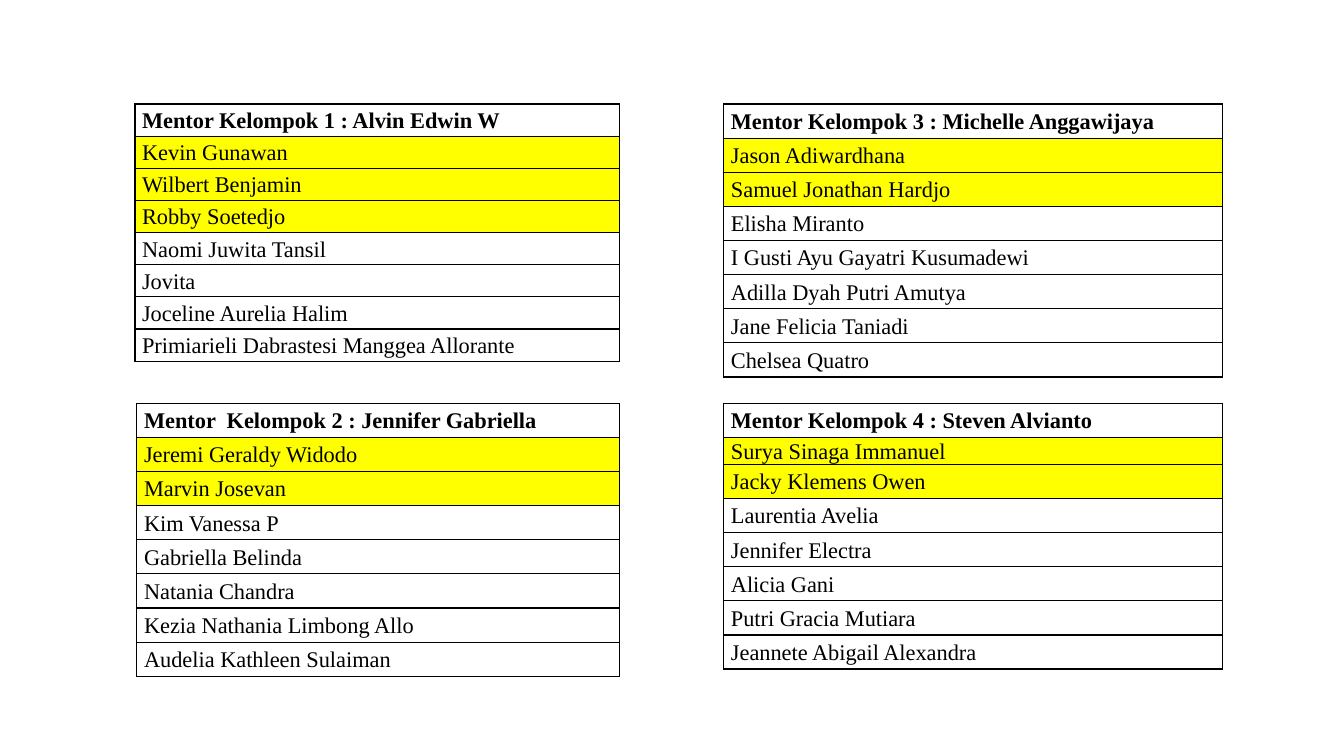
"""Build a slide with four tables of mentor groups."""
from dataclasses import dataclass

from pptx import Presentation
from pptx import util as u
from pptx.dml import color
from pptx.enum import text
from pptx.oxml import parse_xml
from pptx.oxml import ns


@dataclass(frozen=True)
class Theme:
    font: str = "Times New Roman"
    size: int = 16
    ink: str = "000000"
    mark: str = "FFFF00"
    rule: float = 1
    inset: float = 0.18
    lead: float = 1.07


@dataclass(frozen=True)
class Group:
    left: float
    top: float
    width: float
    row: float
    head: str
    marked: tuple[str, ...]
    plain: tuple[str, ...]
    tight: str = ""


THEME = Theme()
TIGHT = 0.68
GROUPS = (
    Group(3.4, 2.62, 12.22, 0.81, "Mentor Kelompok 1 : Alvin Edwin W",
          ("Kevin Gunawan", "Wilbert Benjamin", "Robby Soetedjo"),
          ("Naomi Juwita Tansil", "Jovita", "Joceline Aurelia Halim",
           "Primiarieli Dabrastesi Manggea Allorante")),
    Group(3.45, 10.16, 12.17, 0.86, "Mentor  Kelompok 2 : Jennifer Gabriella",
          ("Jeremi Geraldy Widodo", "Marvin Josevan"),
          ("Kim Vanessa P", "Gabriella Belinda", "Natania Chandra",
           "Kezia Nathania Limbong Allo", "Audelia Kathleen Sulaiman")),
    Group(18.24, 10.16, 12.57, 0.86, "Mentor Kelompok 4 : Steven Alvianto",
          ("Surya Sinaga Immanuel", "Jacky Klemens Owen"),
          ("Laurentia Avelia", "Jennifer Electra", "Alicia Gani",
           "Putri Gracia Mutiara", "Jeannete Abigail Alexandra"),
          tight="Surya Sinaga Immanuel"),
    Group(18.24, 2.62, 12.57, 0.86, "Mentor Kelompok 3 : Michelle Anggawijaya",
          ("Jason Adiwardhana", "Samuel Jonathan Hardjo"),
          ("Elisha Miranto", "I Gusti Ayu Gayatri Kusumadewi",
           "Adilla Dyah Putri Amutya", "Jane Felicia Taniadi",
           "Chelsea Quatro")),
)


def frame(cell) -> None:
    props = cell._tc.get_or_add_tcPr()
    for side in "LRTB":
        props.append(parse_xml(
            f'<a:ln{side} {ns.nsdecls("a")} w="{u.Pt(THEME.rule)}"><a:solidFill>'
            f'<a:srgbClr val="{THEME.ink}"/></a:solidFill></a:ln{side}>'))


def write(cell, words: str, bold: bool, marked: bool) -> None:
    frame(cell)
    if marked:
        cell.fill.solid()
        cell.fill.fore_color.rgb = color.RGBColor.from_string(THEME.mark)
    else:
        cell.fill.background()
    cell.margin_left = cell.margin_right = u.Cm(THEME.inset)
    cell.margin_top = cell.margin_bottom = 0
    cell.vertical_anchor = text.MSO_ANCHOR.MIDDLE
    cell.text_frame.text = words
    para = cell.text_frame.paragraphs[0]
    para.line_spacing = THEME.lead
    font = para.runs[0].font
    font.name, font.size, font.bold = THEME.font, u.Pt(THEME.size), bold
    font.color.rgb = color.RGBColor.from_string(THEME.ink)


def draw(slide, group: Group) -> None:
    lines = (group.head, *group.marked, *group.plain)
    highs = [TIGHT if line == group.tight else group.row for line in lines]
    table = slide.shapes.add_table(
        len(lines), 1, u.Cm(group.left), u.Cm(group.top),
        u.Cm(group.width), u.Cm(sum(highs))).table
    table.first_row = table.horz_banding = False
    for row, line, high in zip(table.rows, lines, highs):
        row.height = u.Cm(high)
        write(row.cells[0], line, line == group.head, line in group.marked)


def main() -> None:
    deck = Presentation()
    deck.slide_width, deck.slide_height = u.Cm(33.87), u.Cm(19.05)
    slide = deck.slides.add_slide(deck.slide_layouts[6])
    for group in GROUPS:
        draw(slide, group)
    deck.save("out.pptx")


if __name__ == "__main__":
    main()
